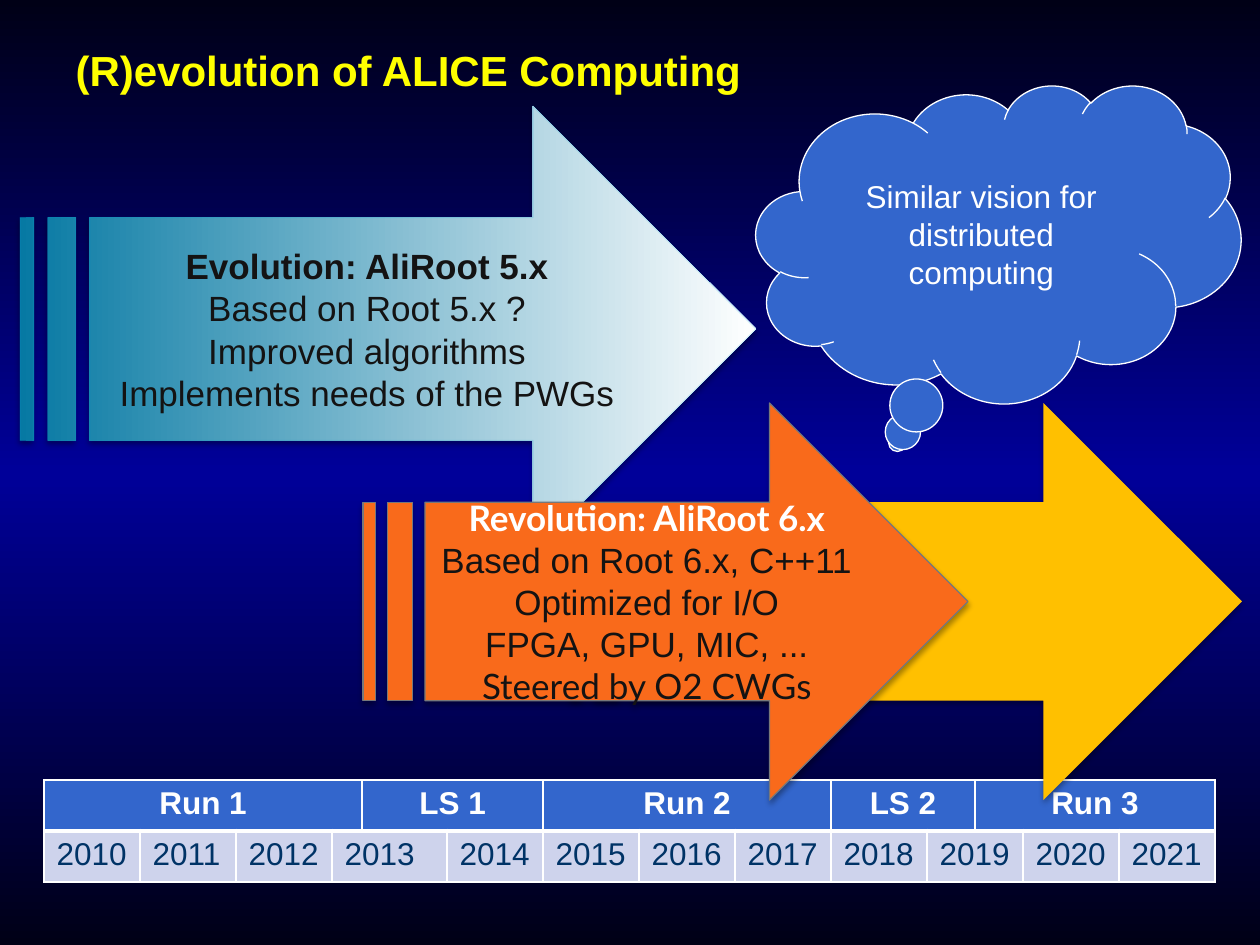
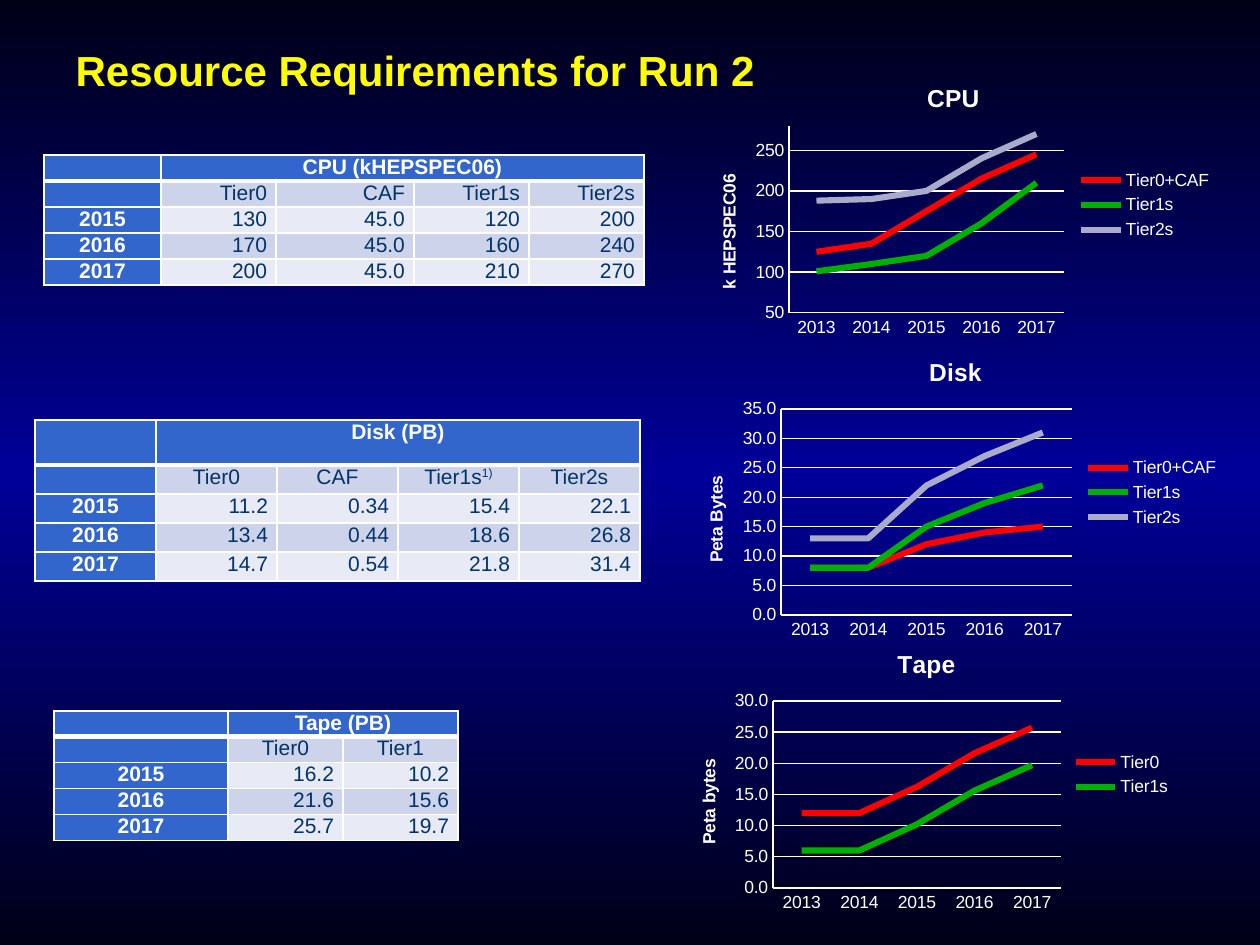
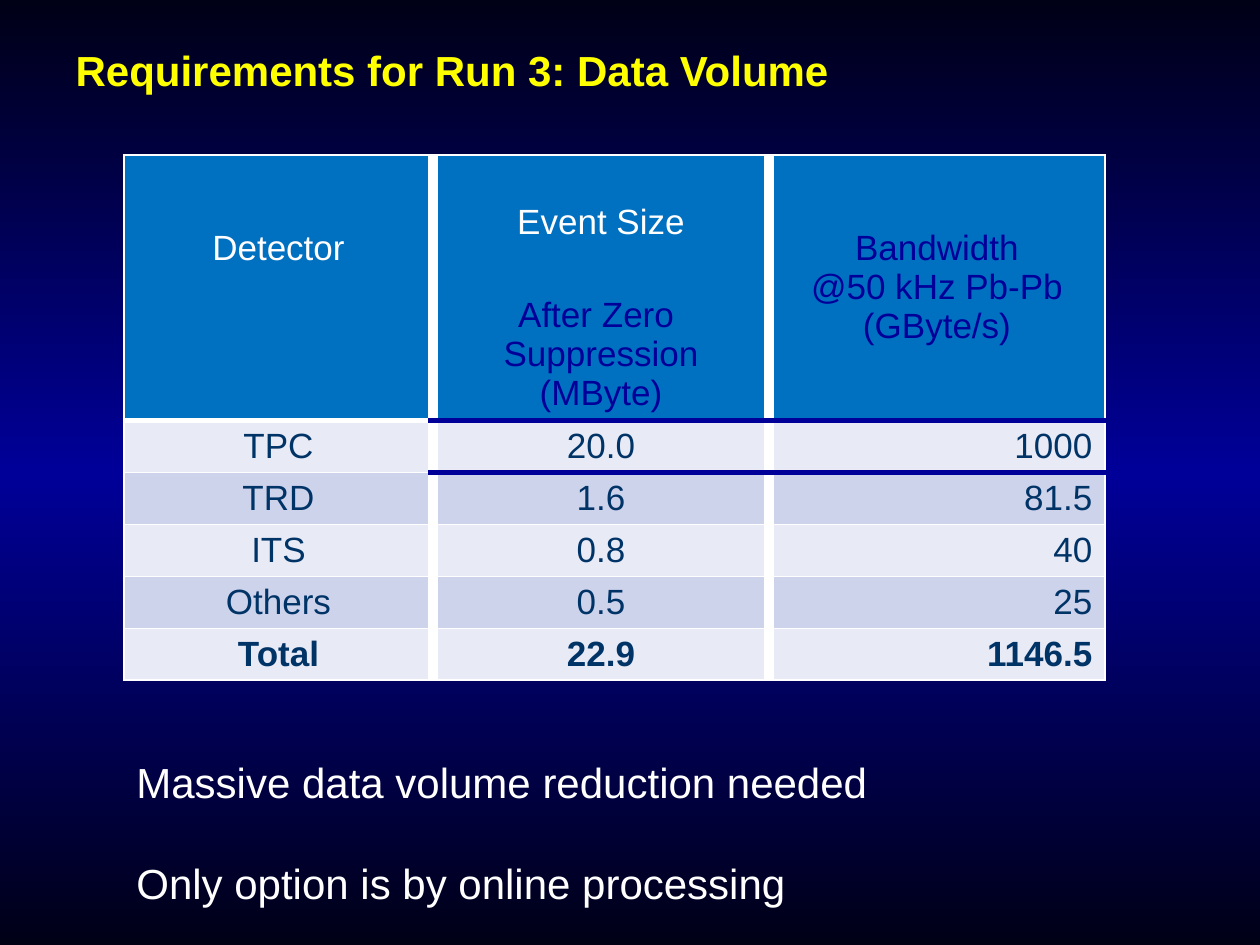
from lxml.etree import SubElement
from pptx import Presentation
from pptx.chart.data import CategoryChartData
from pptx.dml.color import RGBColor
from pptx.enum.chart import XL_CHART_TYPE, XL_LEGEND_POSITION, XL_TICK_MARK
from pptx.enum.shapes import MSO_SHAPE
from pptx.enum.text import MSO_ANCHOR as ANCHOR, PP_ALIGN as ALIGN
from pptx.oxml.ns import qn
from pptx.oxml.xmlchemy import OxmlElement
from pptx.util import Inches, Pt

# Shared colours, fonts and borders
WHITE = RGBColor(0xFF, 0xFF, 0xFF)
YELLOW = RGBColor(0xFF, 0xFF, 0x00)
INK = RGBColor(0x14, 0x13, 0x13)
NIGHT = RGBColor(0x00, 0x00, 0x16)
NAVY = RGBColor(0x00, 0x00, 0x99)
SLATE = RGBColor(0x00, 0x33, 0x66)
BLUE = RGBColor(0x33, 0x66, 0xCC)
HEADER_BLUE = RGBColor(0x00, 0x70, 0xC0)
TEAL = RGBColor(0x06, 0x79, 0xA3)
SKY = RGBColor(0x08, 0xA1, 0xD9)
ORANGE = RGBColor(0xF9, 0x6A, 0x1B)
GREY = RGBColor(0x76, 0x78, 0x7B)
GOLD = RGBColor(0xFF, 0xC0, 0x00)
BANDS = (RGBColor(0xE8, 0xEA, 0xF6), RGBColor(0xCE, 0xD3, 0xEC))
SERIES_COLOURS = (RGBColor(0xFF, 0, 0), RGBColor(0, 0xB0, 0), RGBColor(0xAA, 0xAA, 0xCA))
ARIAL, LATO = "Arial", "Lato"
THIN, HEAVY, THICK, NAVY_RULE = (WHITE, 1), (WHITE, 3), (WHITE, 6), (NAVY, 3)

PX_PER_INCH = 126
TITLE_BOX = (63, 38, 1134, 157)
YEARS = ["2013", "2014", "2015", "2016", "2017"]


def px(length):
    return round(Inches(length) / PX_PER_INCH)


def set_values(target, values):
    for name, value in values.items():
        setattr(target, name, value)


def format_font(font, colour, **values):
    font.color.rgb = colour
    set_values(font, {"name": ARIAL, **values})


def write_lines(frame, lines, align, **style):
    """Write one paragraph per line; a line may be (text, style changes)."""
    for index, line in enumerate(lines):
        text, changes = line if isinstance(line, tuple) else (line, {})
        paragraph = frame.add_paragraph() if index else frame.paragraphs[0]
        paragraph.alignment = align
        run = paragraph.add_run()
        run.text = text
        format_font(run.font, **{**style, **changes})


def paint_gradient(fill, owner, colours, angle):
    fill.gradient()
    fill.gradient_angle = angle
    stops = owner.xpath(".//a:gsLst")[0]
    stops.clear()
    for index, colour in enumerate(colours):
        position = 100000 * index // (len(colours) - 1)
        stop = SubElement(stops, qn("a:gs"), pos=str(position))
        SubElement(stop, qn("a:srgbClr"), val=str(colour))


def add_titled_slide(presentation, title):
    slide = presentation.slides.add_slide(presentation.slide_layouts[5])
    shape = slide.shapes.title
    set_values(shape, dict(zip(("left", "top", "width", "height"), map(px, TITLE_BOX))))
    shape.text_frame.vertical_anchor = ANCHOR.TOP
    write_lines(shape.text_frame, [title], ALIGN.LEFT, colour=YELLOW, size=Pt(24), bold=True)
    return slide


# Tables
def add_grid(slide, left, top, widths, heights):
    frame = slide.shapes.add_table(
        len(heights), len(widths), *map(px, (left, top, sum(widths), sum(heights))))
    for column, width in zip(frame.table.columns, widths):
        column.width = px(width)
    for row, height in zip(frame.table.rows, heights):
        row.height = px(height)
    return frame.table


def fill_cell(cell, colour):
    cell.fill.solid()
    cell.fill.fore_color.rgb = colour


def header_rule(row_line, column):
    return HEAVY if row_line == 1 else THIN


def draw_borders(table, row_edge=header_rule, column_edge=lambda line: THIN):
    """Border every cell; the edge functions give the style of each grid line."""
    for row in range(len(table.rows)):
        for column in range(len(table.columns)):
            cell = table.cell(row, column)
            edges = {
                "a:lnL": column_edge(column),
                "a:lnR": column_edge(column + cell.span_width),
                "a:lnT": row_edge(row, column),
                "a:lnB": row_edge(row + cell.span_height, column),
            }
            properties = cell._tc.get_or_add_tcPr()
            for index, (tag, edge) in enumerate(edges.items()):
                line = OxmlElement(tag)
                if edge:
                    colour, width = edge
                    line.set("w", str(Pt(width)))
                    paint = SubElement(line, qn("a:solidFill"))
                    SubElement(paint, qn("a:srgbClr"), val=str(colour))
                else:
                    SubElement(line, qn("a:noFill"))
                properties.insert(index, line)


def add_timeline(slide, left, top):
    widths = [96] * 3 + [30, 85] + [96] * 5 + [48] * 2 + [96] * 2
    table = add_grid(slide, left, top, widths, [51, 51])
    periods = [("Run 1", 4), ("LS 1", 2), ("Run 2", 3), ("LS 2", 2), ("Run 3", 3)]
    years = [(str(year), 2 if year in (2013, 2019) else 1) for year in range(2010, 2022)]
    rows = [
        (periods, BLUE, ALIGN.CENTER, {"colour": WHITE, "bold": True}),
        (years, BANDS[1], ALIGN.LEFT, {"colour": SLATE}),
    ]
    for row, (entries, colour, align, style) in enumerate(rows):
        column = 0
        for text, span in entries:
            cell = table.cell(row, column)
            if span > 1:
                cell.merge(table.cell(row, column + span - 1))
            fill_cell(cell, colour)
            write_lines(cell.text_frame, [text], align, size=Pt(18), **style)
            column += span
    draw_borders(table)


def add_resource_table(slide, left, top, widths, heights, heading, tiers, tier_align, figures):
    table = add_grid(slide, left, top, widths, heights)
    table.cell(0, 1).merge(table.cell(0, len(widths) - 1))
    rows = [["", heading], ["", *tiers], *figures]
    for row, texts in enumerate(rows):
        for column, text in enumerate(texts):
            cell = table.cell(row, column)
            is_header = row == 0 or column == 0
            fill_cell(cell, BLUE if is_header else BANDS[row % 2])
            set_values(cell, {"margin_left": px(9), "margin_right": px(9),
                              "margin_top": 0, "margin_bottom": 0})
            if not text:
                cell.text_frame.paragraphs[0]._p.get_or_add_endParaRPr().set("sz", "1200")
                continue
            align = ALIGN.CENTER if is_header else tier_align if row == 1 else ALIGN.RIGHT
            write_lines(cell.text_frame, [text], align, size=Pt(12),
                        colour=WHITE if is_header else SLATE, bold=is_header)
    draw_borders(table)
    return table


def add_footnote_mark(cell, mark):
    run = cell.text_frame.paragraphs[0].add_run()
    run.text = mark
    format_font(run.font, SLATE, size=Pt(12), bold=False)
    run._r.get_or_add_rPr().set("baseline", "30000")


def volume_row_edge(row_line, column):
    if row_line == 1:
        return None
    if row_line in (2, 3) and column > 0:
        return NAVY_RULE
    return HEAVY if row_line == 2 else THIN


def add_volume_table(slide, left, top):
    table = add_grid(slide, left, top, [309, 336, 336], [134, 128] + [52] * 4 + [51])
    for column in (0, 2):
        table.cell(0, column).merge(table.cell(1, column))
    headers = [
        (0, 0, ["Detector"], WHITE),
        (0, 1, ["Event Size"], WHITE),
        (1, 1, ["After Zero ", "Suppression", "(MByte)"], NAVY),
        (0, 2, ["Bandwidth", "@50 kHz Pb-Pb", "(GByte/s)"], NAVY),
    ]
    for row, column, lines, colour in headers:
        cell = table.cell(row, column)
        fill_cell(cell, HEADER_BLUE)
        cell.vertical_anchor = ANCHOR.TOP if row else ANCHOR.MIDDLE
        write_lines(cell.text_frame, lines, ALIGN.CENTER, size=Pt(20), colour=colour, bold=False)
    table.cell(0, 0).margin_bottom = px(86)
    figures = [
        ("TPC", "20.0", "1000"),
        ("TRD", "1.6", "81.5"),
        ("ITS", "0.8", "40"),
        ("Others", "0.5", "25"),
        ("Total", "22.9", "1146.5"),
    ]
    for row, texts in enumerate(figures, start=2):
        for column, text in enumerate(texts):
            cell = table.cell(row, column)
            fill_cell(cell, BANDS[row % 2])
            write_lines(cell.text_frame, [text], ALIGN.RIGHT if column == 2 else ALIGN.CENTER,
                        size=Pt(20), colour=SLATE, bold=texts[0] == "Total")
    draw_borders(table, volume_row_edge, lambda line: THICK if line in (1, 2) else THIN)


# Shapes
def add_arrow(slide, box, colours, outline=None):
    shape = slide.shapes.add_shape(MSO_SHAPE.STRIPED_RIGHT_ARROW, *map(px, box))
    if len(colours) > 1:
        paint_gradient(shape.fill, shape.element, colours, 0)
    else:
        shape.fill.solid()
        shape.fill.fore_color.rgb = colours[0]
    if outline:
        shape.line.color.rgb = outline
        shape.line.width = Pt(0.75)
    else:
        shape.line.fill.background()
    # Soft shadow straight below
    shape.shadow.inherit = False
    effects = shape.element.xpath(".//a:effectLst")[0]
    shadow = SubElement(effects, qn("a:outerShdw"), blurRad=str(Pt(3.1)), dist=str(Pt(1.8)),
                        dir="5400000", rotWithShape="0")
    black = SubElement(shadow, qn("a:srgbClr"), val="000000")
    SubElement(black, qn("a:alpha"), val="35000")
    shape.text_frame.vertical_anchor = ANCHOR.MIDDLE
    return shape


def add_cloud(slide, box, text):
    shape = slide.shapes.add_shape(MSO_SHAPE.CLOUD_CALLOUT, *map(px, box))
    shape.shadow.inherit = False
    shape.fill.solid()
    shape.fill.fore_color.rgb = BLUE
    shape.line.color.rgb = WHITE
    shape.line.width = Pt(0.75)
    set_values(shape.text_frame, {"vertical_anchor": ANCHOR.MIDDLE, "margin_bottom": px(12)})
    write_lines(shape.text_frame, [text], ALIGN.CENTER, size=Pt(18), colour=WHITE)


# Charts
def place_plot(chart, box, plot_box):
    """Fix the inner plot area, given in px from the chart's corner."""
    plot_area = chart._chartSpace.xpath(".//c:plotArea")[0]
    for layout in plot_area.findall(qn("c:layout")):
        plot_area.remove(layout)
    layout = OxmlElement("c:layout")
    manual = SubElement(layout, qn("c:manualLayout"))
    settings = {"layoutTarget": "inner", "xMode": "edge", "yMode": "edge"}
    for name, length, whole in zip("xywh", plot_box, box[2:] * 2):
        settings[name] = f"{length / whole:.4f}"
    for name, value in settings.items():
        SubElement(manual, qn(f"c:{name}"), val=value)
    plot_area.insert(0, layout)


def add_title_text(title, text, size):
    title.text_frame.text = text
    format_font(title.text_frame.paragraphs[0].runs[0].font, WHITE, size=size, bold=True)


def add_line_chart(slide, box, plot_box, title, unit, series, number_format, scale):
    data = CategoryChartData()
    data.categories = YEARS
    for name, values in series.items():
        data.add_series(name, values)
    chart = slide.shapes.add_chart(XL_CHART_TYPE.LINE, *map(px, box), data).chart
    format_font(chart.font, WHITE, size=Pt(10))
    chart.has_title = True
    add_title_text(chart.chart_title, title, Pt(14))
    chart.has_legend = True
    set_values(chart.legend, {"position": XL_LEGEND_POSITION.RIGHT, "include_in_layout": False})
    # Axes
    for axis in (chart.category_axis, chart.value_axis):
        set_values(axis, {"major_tick_mark": XL_TICK_MARK.NONE,
                          "minor_tick_mark": XL_TICK_MARK.NONE})
        axis.format.line.color.rgb = WHITE
    value_axis = chart.value_axis
    set_values(value_axis, {"has_major_gridlines": True, **scale})
    value_axis.major_gridlines.format.line.color.rgb = WHITE
    set_values(value_axis.tick_labels,
               {"number_format": number_format, "number_format_is_linked": False})
    add_title_text(value_axis.axis_title, unit, Pt(10))
    # Lines
    chart.plots[0].vary_by_categories = False
    for line, colour in zip(chart.plots[0].series, SERIES_COLOURS):
        line.smooth = False
        line.format.line.color.rgb = colour
        line.format.line.width = Pt(3.5)
    place_plot(chart, box, plot_box)


# Slides
def build_evolution_slide(presentation):
    slide = add_titled_slide(presentation, "(R)evolution of ALICE Computing")
    add_timeline(slide, 44, 780)
    evolution = add_arrow(slide, (20, 106, 736, 446), [TEAL, WHITE], SKY)
    line_colour = evolution.element.xpath("./p:spPr/a:ln//a:srgbClr")[0]
    SubElement(line_colour, qn("a:alpha"), val="18000")
    write_lines(evolution.text_frame, [
        ("Evolution: AliRoot 5.x", {"bold": True}),
        "Based on Root 5.x ?",
        "Improved algorithms",
        "Implements needs of the PWGs",
    ], ALIGN.CENTER, size=Pt(20), colour=INK)
    add_arrow(slide, (570, 403, 672, 397), [GOLD])
    revolution = add_arrow(slide, (363, 403, 605, 397), [ORANGE], GREY)
    write_lines(revolution.text_frame, [
        ("Revolution: AliRoot 6.x", {"bold": True, "name": LATO, "colour": WHITE}),
        "Based on Root 6.x, C++11",
        "Optimized for I/O",
        "FPGA, GPU, MIC, ...",
        ("Steered by O2 CWGs", {"name": LATO}),
    ], ALIGN.CENTER, size=Pt(20), colour=INK)
    add_cloud(slide, (756, 85, 485, 318), "Similar vision for distributed computing")


def build_resources_slide(presentation):
    slide = add_titled_slide(presentation, "Resource Requirements for Run 2")
    tiers = ["Tier0", "CAF", "Tier1s", "Tier2s"]
    add_resource_table(
        slide, 44, 155, [117, 115, 138, 115, 115], [26] * 5, "CPU (kHEPSPEC06)", tiers, ALIGN.RIGHT,
        [["2015", "130", "45.0", "120", "200"],
         ["2016", "170", "45.0", "160", "240"],
         ["2017", "200", "45.0", "210", "270"]])
    add_resource_table(
        slide, 54, 711, [174, 115, 115], [22] + [26] * 4, "Tape (PB)", ["Tier0", "Tier1"], ALIGN.CENTER,
        [["2015", "16.2", "10.2"], ["2016", "21.6", "15.6"], ["2017", "25.7", "19.7"]])
    disk = add_resource_table(
        slide, 35, 420, [121] * 5, [45] + [29] * 4, "Disk (PB)", tiers, ALIGN.CENTER,
        [["2015", "11.2", "0.34", "15.4", "22.1"],
         ["2016", "13.4", "0.44", "18.6", "26.8"],
         ["2017", "14.7", "0.54", "21.8", "31.4"]])
    add_footnote_mark(disk.cell(1, 3), "1)")

    add_line_chart(
        slide, (679, 339, 553, 307), (102, 70, 291, 206), "Disk", "Peta Bytes",
        {"Tier0+CAF": [8, 8, 12, 14, 15],
         "Tier1s": [8, 8, 15, 19, 22],
         "Tier2s": [13, 13, 22, 27, 31]},
        "0.0", {"major_unit": 5})
    add_line_chart(
        slide, (669, 631, 515, 287), (104, 70, 288, 187), "Tape", "Peta bytes",
        {"Tier0": [12, 12, 16.2, 21.6, 25.7], "Tier1s": [6, 6, 10.2, 15.6, 19.7]},
        "0.0", {"major_unit": 5})
    add_line_chart(
        slide, (689, 66, 536, 278), (100, 60, 275, 187), "CPU ", "k HEPSPEC06",
        {"Tier0+CAF": [125, 135, 175, 215, 245],
         "Tier1s": [101, 110, 120, 160, 210],
         "Tier2s": [188, 190, 200, 240, 270]},
        "0", {"minimum_scale": 50, "maximum_scale": 280, "major_unit": 50})


def build_volume_slide(presentation):
    slide = add_titled_slide(presentation, "Requirements for Run 3: Data Volume")
    add_volume_table(slide, 124, 155)
    frame = slide.shapes.add_textbox(*map(px, (124, 750, 983, 165))).text_frame
    frame.word_wrap = True
    write_lines(frame, ["Massive data volume reduction needed",
                        "Only option is by online processing"],
                ALIGN.LEFT, size=Pt(24), colour=WHITE)
    frame.paragraphs[1].space_before = Pt(29)


def main():
    presentation = Presentation()
    presentation.slide_width, presentation.slide_height = px(1260), px(945)
    master = presentation.slide_master
    paint_gradient(master.background.fill, master.element.cSld, [NIGHT, NAVY, NIGHT], 270)
    build_evolution_slide(presentation)
    build_resources_slide(presentation)
    build_volume_slide(presentation)
    presentation.save("out.pptx")


if __name__ == "__main__":
    main()
